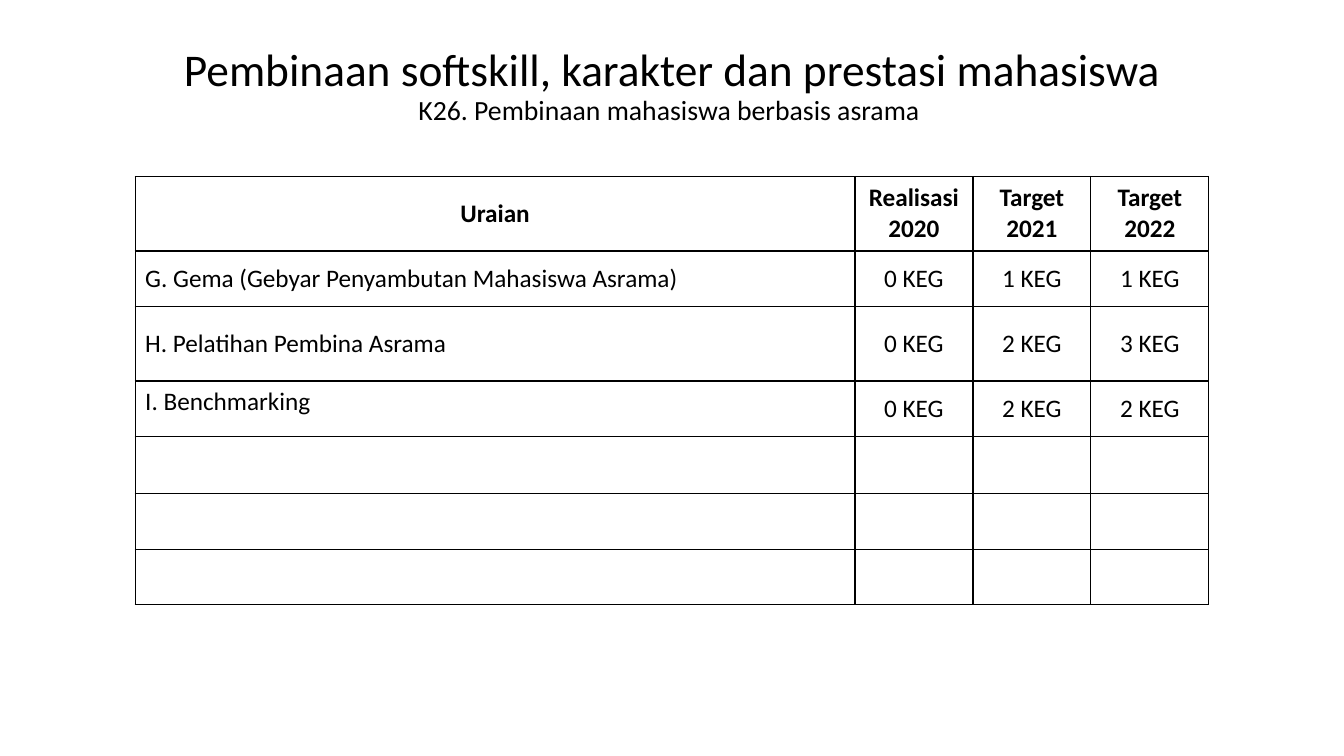
from dataclasses import dataclass

from pptx import Presentation
from pptx.dml.color import RGBColor
from pptx.enum.text import MSO_ANCHOR, MSO_AUTO_SIZE, PP_ALIGN
from pptx.oxml import parse_xml
from pptx.oxml.ns import nsdecls
from pptx.util import Inches, Pt


@dataclass(frozen=True)
class Theme:
    font: str = "Calibri"
    ink: str = "000000"
    title_size: float = 32.4
    subtitle_size: float = 19.8
    table_size: float = 18
    border_width: float = 1


class SlideBuilder:
    def __init__(self, deck, theme):
        self.theme = theme
        self.page = deck.slides.add_slide(deck.slide_layouts[5])

    def style(self, font, size, bold=False):
        font.name = self.theme.font
        font.size = Pt(size)
        font.bold = bold
        font.color.rgb = RGBColor.from_string(self.theme.ink)

    def title(self, title, subtitle, left, top, width, height):
        box = self.page.shapes.title
        box.left, box.top = Inches(left), Inches(top)
        box.width, box.height = Inches(width), Inches(height)
        frame = box.text_frame
        frame.word_wrap = True
        frame.auto_size = MSO_AUTO_SIZE.NONE
        frame.vertical_anchor = MSO_ANCHOR.MIDDLE
        para = frame.paragraphs[0]
        para.text = f"{title}\v{subtitle}"
        para.alignment = PP_ALIGN.CENTER
        para.line_spacing = 0.9
        sizes = (self.theme.title_size, self.theme.subtitle_size)
        for span, size in zip(para.runs, sizes):
            self.style(span.font, size)

    def border(self, cell):
        properties = cell._tc.get_or_add_tcPr()
        for index, side in enumerate(("lnL", "lnR", "lnT", "lnB")):
            line = parse_xml(
                f'<a:{side} {nsdecls("a")} w="{Pt(self.theme.border_width)}">'
                f'<a:solidFill><a:srgbClr val="{self.theme.ink}"/></a:solidFill>'
                f"</a:{side}>"
            )
            properties.insert(index, line)

    def cell(self, cell, text, centred, bold, anchor):
        cell.fill.background()
        self.border(cell)
        cell.vertical_anchor = anchor
        cell.text_frame.text = text
        for para in cell.text_frame.paragraphs:
            para.alignment = PP_ALIGN.CENTER if centred else PP_ALIGN.LEFT
            self.style(para.font, self.theme.table_size, bold)
            for span in para.runs:
                self.style(span.font, self.theme.table_size, bold)

    def table(self, rows, left, top, widths, heights, top_cells=()):
        """Draw a ruled table; top_cells lists the (row, column) pairs anchored at the top."""
        table = self.page.shapes.add_table(
            len(heights), len(widths), Inches(left), Inches(top),
            Inches(sum(widths)), Inches(sum(heights)),
        ).table
        table.horz_banding = False
        for column, width in zip(table.columns, widths):
            column.width = Inches(width)
        for row, height in zip(table.rows, heights):
            row.height = Inches(height)
        for r, texts in enumerate(rows):
            for c, text in enumerate(texts):
                anchor = MSO_ANCHOR.TOP if (r, c) in top_cells else MSO_ANCHOR.MIDDLE
                self.cell(table.cell(r, c), text, r == 0 or c > 0, r == 0, anchor)


HEADER = ("Uraian", "Realisasi\n2020", "Target\n2021", "Target\n2022")
ACTIVITIES = (
    ("G. Gema (Gebyar Penyambutan Mahasiswa Asrama)", 0, 1, 1),
    ("H. Pelatihan Pembina Asrama", 0, 2, 3),
    ("I. Benchmarking", 0, 2, 2),
)
EMPTY_ROWS = 3


def main():
    deck = Presentation()
    deck.slide_width, deck.slide_height = Inches(13.33), Inches(7.5)
    slide = SlideBuilder(deck, Theme())
    slide.title(
        "Pembinaan softskill, karakter dan prestasi mahasiswa",
        "K26. Pembinaan mahasiswa berbasis asrama ",
        1.38, 0.32, 10.57, 1.08,
    )
    rows = [HEADER]
    rows += [(name, *(f"{count} KEG" for count in counts)) for name, *counts in ACTIVITIES]
    rows += [("",) * len(HEADER)] * EMPTY_ROWS
    slide.table(
        rows, 1.34, 1.75,
        widths=(7.14, 1.17, 1.17, 1.17),
        heights=(0.74, 0.55, 0.74, 0.55, 0.57, 0.55, 0.55),
        top_cells={(3, 0)},
    )
    deck.save("out.pptx")


if __name__ == "__main__":
    main()
